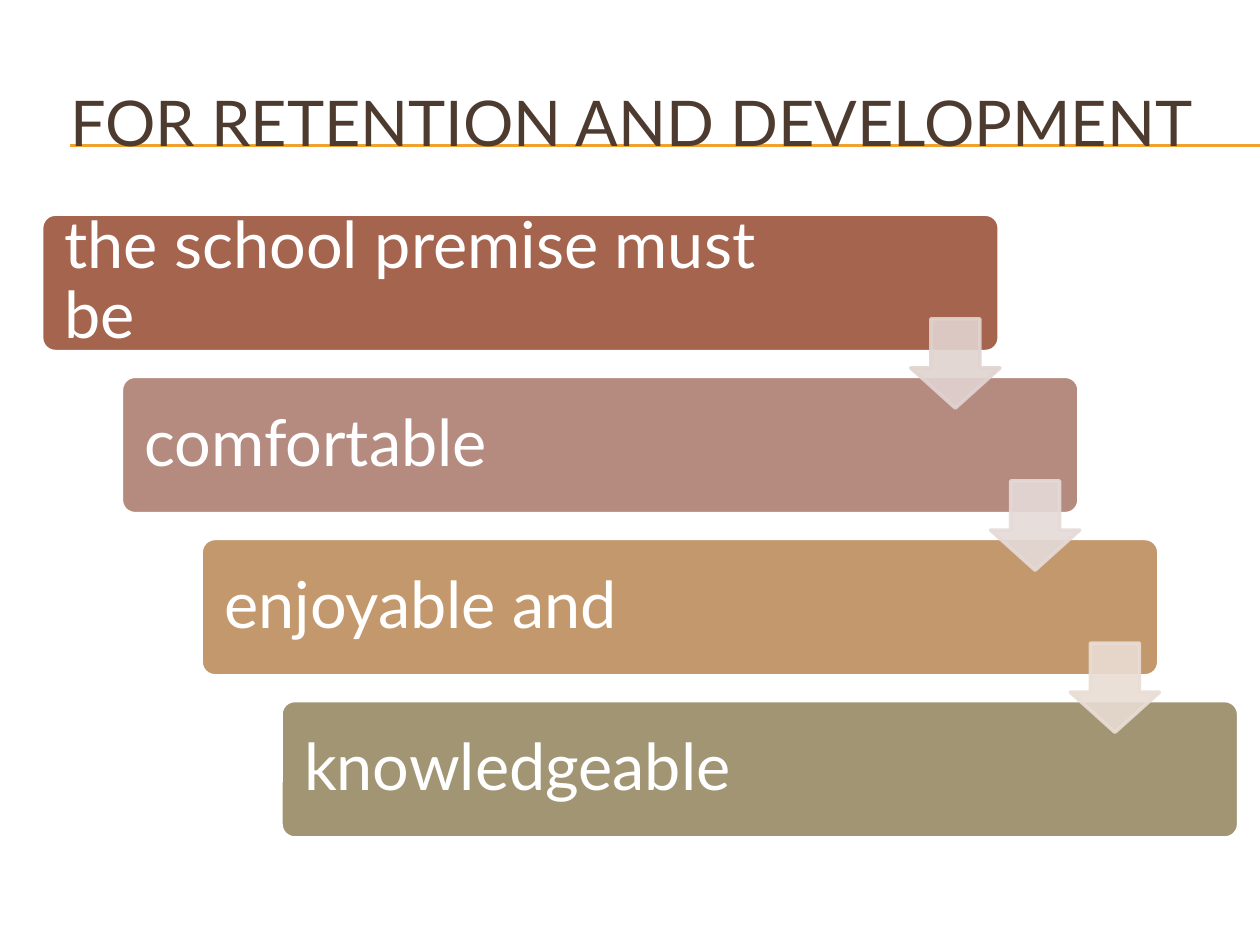
from lxml.etree import SubElement
from pptx import Presentation
from pptx.dml.color import RGBColor
from pptx.enum.shapes import MSO_CONNECTOR as Connector, MSO_SHAPE as Shape
from pptx.enum.text import MSO_ANCHOR as Anchor, PP_ALIGN as Align
from pptx.oxml.ns import qn
from pptx.util import Pt

COLORS = {
    "title": "4E3B30",
    "rule": "F0A22E",
    "white": "FFFFFF",
    "steps": ["A5644E", "B58B80", "C3986D", "A19574"],
    "arrows": ["E1D3D0", "E5DAD8", "E9DDD4"],
}
STEPS = ["the school premise must be", "comfortable", "enjoyable and", "knowledgeable"]
LABEL_WIDTHS = [456, 446, 446, 446]
STEP_LEFT, STEP_TOP = 23.8, 122.4
STEP_WIDTH, STEP_HEIGHT = 547.2, 78.5
SHIFT_X, SHIFT_Y = 45.6, 92.65
LABEL_OFFSET = 2.4
ARROW_LEFT, ARROW_TOP, ARROW_SIZE = 520.4, 182.2, 51


def rgb(color):
    return RGBColor.from_string(color)


def add_rule(slide, y):
    rule = slide.shapes.add_connector(Connector.STRAIGHT, Pt(40.3), Pt(y), Pt(720), Pt(y))
    rule.line.color.rgb = rgb(COLORS["rule"])
    rule.line.width = Pt(0.75)
    SubElement(rule._element.spPr, qn("a:effectLst"))


def add_text(slide, box, wording, size, color, insets, spacing=1.0):
    frame = slide.shapes.add_textbox(*map(Pt, box)).text_frame
    settings = {"word_wrap": True, "vertical_anchor": Anchor.MIDDLE}
    sides = ("margin_left", "margin_top", "margin_right", "margin_bottom")
    settings.update(zip(sides, map(Pt, insets)))
    for key, value in settings.items():
        setattr(frame, key, value)
    paragraph = frame.paragraphs[0]
    paragraph.alignment = Align.LEFT
    paragraph.line_spacing = spacing
    run = paragraph.add_run()
    run.text = wording
    for key, value in {"name": "Lato", "size": Pt(size)}.items():
        setattr(run.font, key, value)
    run.font.color.rgb = rgb(color)


def add_block(slide, kind, box, adjustments, fill, line):
    block = slide.shapes.add_shape(kind, *map(Pt, box))
    block.shadow.inherit = False
    for index, value in enumerate(adjustments):
        block.adjustments[index] = value
    block.fill.solid()
    block.fill.fore_color.rgb = rgb(fill)
    block.line.color.rgb = rgb(line)
    block.line.width = Pt(2)
    return block


def add_step(slide, index):
    left = STEP_LEFT + index * SHIFT_X
    top = STEP_TOP + index * SHIFT_Y
    add_block(slide, Shape.ROUNDED_RECTANGLE, (left, top, STEP_WIDTH, STEP_HEIGHT),
              [0.1], COLORS["steps"][index], COLORS["white"])
    label_box = (left + LABEL_OFFSET, top + LABEL_OFFSET,
                 LABEL_WIDTHS[index], STEP_HEIGHT - 2 * LABEL_OFFSET)
    add_text(slide, label_box, STEPS[index], 37, COLORS["white"], [10.8] * 4, 0.9)


def add_arrow(slide, index, color):
    box = (ARROW_LEFT + index * SHIFT_X, ARROW_TOP + index * SHIFT_Y, ARROW_SIZE, ARROW_SIZE)
    arrow = add_block(slide, Shape.DOWN_ARROW, box, [0.55, 0.45], color, color)
    arrow.adjustments[0] = 0.55
    arrow.adjustments[1] = 0.45
    for tint in arrow._element.spPr.iter(qn("a:srgbClr")):
        SubElement(tint, qn("a:alpha"), val="90000")


def main():
    deck = Presentation()
    deck.slide_width, deck.slide_height = Pt(720), Pt(540)
    slide = deck.slides.add_slide(deck.slide_layouts[6])
    for y in (82.8, 83.5):
        add_rule(slide, y)
    add_text(slide, (23.8, 36, 684, 66.2), " FOR RETENTION AND DEVELOPMENT",
             36, COLORS["title"], (7.2, 3.6, 7.2, 3.6))
    for index in range(len(STEPS)):
        add_step(slide, index)
    for index, color in enumerate(COLORS["arrows"]):
        add_arrow(slide, index, color)
    deck.save("out.pptx")


if __name__ == "__main__":
    main()
